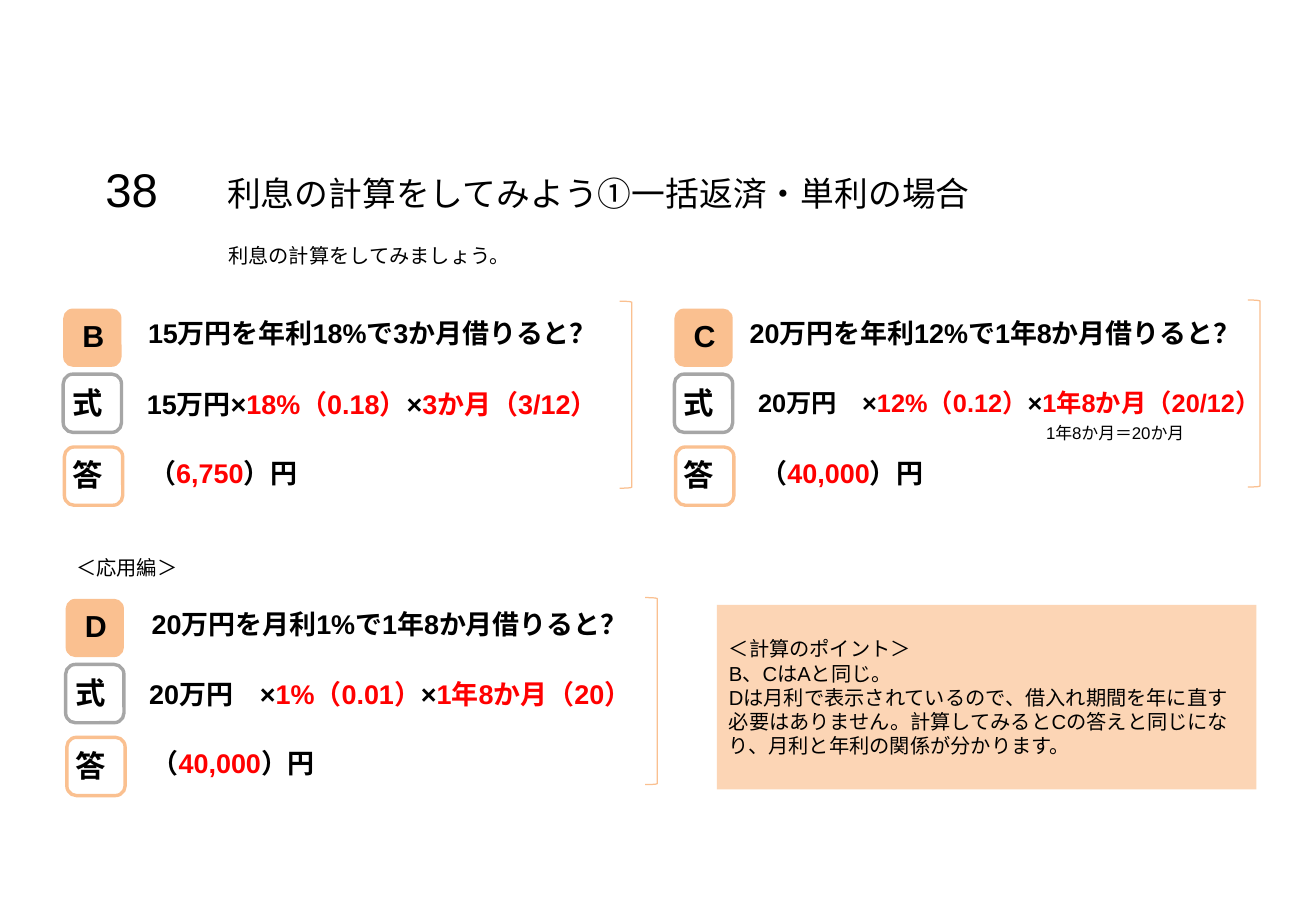
from dataclasses import dataclass

from pptx import Presentation
from pptx import util as u
from pptx.dml.color import RGBColor
from pptx.enum import shapes, text

PX = u.Inches(1) // 100
FONT = "Arial"
BLACK = RGBColor(0x00, 0x00, 0x00)
RED = RGBColor(0xFF, 0x00, 0x00)
GRAY = RGBColor(0xA6, 0xA6, 0xA6)
ORANGE = RGBColor(0xFA, 0xC0, 0x90)
PEACH = RGBColor(0xFC, 0xD5, 0xB5)
KIND = shapes.MSO_SHAPE


@dataclass(frozen=True)
class Box:
    x: int
    y: int
    w: int
    h: int


@dataclass(frozen=True)
class Panel:
    """One exercise; runs alternate between black and red."""
    x: int
    y: int
    key: str
    ask: str
    sum: tuple[str, ...]
    reply: str
    ask_dx: int
    ask_w: int
    sum_w: int
    edge: Box
    size: int = 16


PANELS = (
    Panel(52, 254, "B", "15万円を年利18%で3か月借りると？",
          ("15万円×", "18%（0.18）", "×", "3か月（3/12）"),
          "6,750", 60, 414, 402, Box(510, 248, 10, 154)),
    Panel(555, 254, "C", "20万円を年利12%で1年8か月借りると？",
          ("20万円　×", "12%（0.12）", "×", "1年8か月（20/12）"),
          "40,000", 52, 435, 453, Box(1027, 247, 10, 154), 15),
    Panel(54, 493, "D", "20万円を月利1%で1年8か月借りると？",
          ("20万円　×", "1%（0.01）", "×", "1年8か月（20）"),
          "40,000", 61, 453, 436, Box(531, 492, 10, 154)),
)

TIPS = (
    "＜計算のポイント＞",
    "B、CはAと同じ。",
    "Dは月利で表示されているので、借入れ期間を年に直す必要はありません。"
    "計算してみるとCの答えと同じになり、月利と年利の関係が分かります。",
)

LABELS = (
    (Box(177, 137, 747, 44), "利息の計算をしてみよう①一括返済・単利の場合", 20),
    (Box(178, 195, 583, 30), "利息の計算をしてみましょう。", 12),
    (Box(53, 452, 123, 30), "＜応用編＞", 12),
    (Box(851, 343, 195, 27), "1年8か月＝20か月", 10),
    (Box(77, 127, 87, 57), "38", 28),
)


def area(box: Box) -> tuple[int, ...]:
    return tuple(n * PX for n in (box.x, box.y, box.w, box.h))


def style(font, size: int, bold: bool = False, color: RGBColor = BLACK) -> None:
    font.name, font.size, font.bold = FONT, u.Pt(size), bold
    font.color.rgb = color


def write(slide, box: Box, parts: tuple[str, ...], size: int,
          bold: bool = False) -> None:
    """Add a text box whose runs alternate between black and red."""
    frame = slide.shapes.add_textbox(*area(box)).text_frame
    frame.word_wrap = True
    frame.auto_size = text.MSO_AUTO_SIZE.SHAPE_TO_FIT_TEXT
    for i, part in enumerate(parts):
        run = frame.paragraphs[0].add_run()
        run.text = part
        style(run.font, size, bold, RED if i % 2 else BLACK)


def draw(slide, kind: KIND, box: Box, fill: RGBColor | None = None,
         line: RGBColor | None = None, width: float = 2):
    shape = slide.shapes.add_shape(kind, *area(box))
    shape.shadow.inherit = False
    if fill is None:
        shape.fill.background()
    else:
        shape.fill.solid()
        shape.fill.fore_color.rgb = fill
    if line is None:
        shape.line.fill.background()
    else:
        shape.line.color.rgb = line
        shape.line.width = u.Pt(width)
    return shape


def add_panel(slide, panel: Panel) -> None:
    x, y = panel.x, panel.y
    tags = (
        (0, 0, ORANGE, None, 6, 2, panel.key),
        (0, 54, None, GRAY, -2, 57, "式"),
        (1, 114, None, ORANGE, -2, 117, "答"),
    )
    for dx, dy, fill, line, tag_dx, tag_dy, tag in tags:
        draw(slide, KIND.ROUNDED_RECTANGLE, Box(x + dx, y + dy, 48, 48), fill, line)
        write(slide, Box(x + tag_dx, y + tag_dy, 57, 40), (tag,), 18, True)
    write(slide, Box(x + panel.ask_dx, y + 2, panel.ask_w, 37), (panel.ask,), 16, True)
    write(slide, Box(x + 59, y + 60, panel.sum_w, 37), panel.sum, panel.size, True)
    write(slide, Box(x + 61, y + 117, 219, 37), ("（", panel.reply, "）円"), 16, True)
    draw(slide, KIND.RIGHT_BRACKET, panel.edge, line=ORANGE, width=0.75)


def add_tips(slide) -> None:
    frame = draw(slide, KIND.RECTANGLE, Box(590, 498, 444, 152), PEACH).text_frame
    frame.word_wrap = True
    frame.vertical_anchor = text.MSO_ANCHOR.MIDDLE
    frame.text = "\n".join(TIPS)
    for line in frame.paragraphs:
        line.alignment = text.PP_ALIGN.LEFT
        for run in line.runs:
            style(run.font, 12)


def main() -> None:
    deck = Presentation()
    deck.slide_width, deck.slide_height = 1083 * PX, 750 * PX
    slide = deck.slides.add_slide(deck.slide_layouts[6])
    for panel in PANELS:
        add_panel(slide, panel)
    for box, label, size in LABELS:
        write(slide, box, (label,), size)
    add_tips(slide)
    deck.save("out.pptx")


if __name__ == "__main__":
    main()
